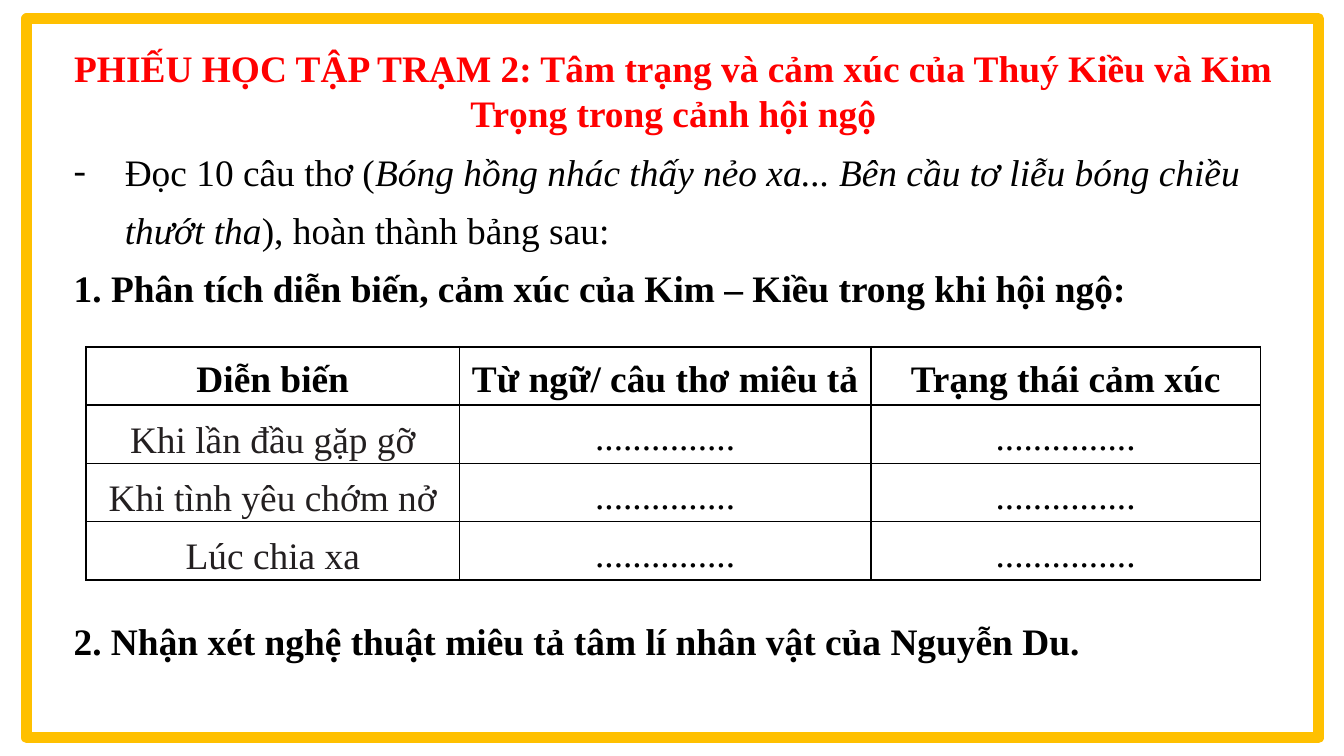
from lxml.etree import SubElement
from pptx import Presentation
from pptx.dml.color import RGBColor
from pptx.enum.shapes import MSO_SHAPE
from pptx.enum.text import MSO_ANCHOR, MSO_AUTO_SIZE, PP_ALIGN
from pptx.oxml.ns import qn
from pptx.util import Inches, Pt

WHITE = RGBColor(0xFF, 0xFF, 0xFF)
GOLD = RGBColor(0xFF, 0xC0, 0x00)
RED = RGBColor(0xFF, 0x00, 0x00)
BLACK = RGBColor(0x00, 0x00, 0x00)
DARK = RGBColor(0x23, 0x1F, 0x20)


def style(para, color=BLACK, bold=False, space=1.3):
    para.line_spacing = space
    for run in para.runs:
        run.font.name = "Times New Roman"
        run.font.size = Pt(20)
        run.font.bold = bold
        run.font.color.rgb = color


def add_box(left, top, width, height):
    box = slide.shapes.add_textbox(Inches(left), Inches(top), Inches(width), Inches(height))
    box.text_frame.word_wrap = True
    box.text_frame.auto_size = MSO_AUTO_SIZE.SHAPE_TO_FIT_TEXT
    return box.text_frame


# Widescreen slide, 16:9
prs = Presentation()
prs.slide_width = Inches(10)
prs.slide_height = Inches(10) * 9 // 16
slide = prs.slides.add_slide(prs.slide_layouts[6])

# Gold frame
frame = slide.shapes.add_shape(
    MSO_SHAPE.RECTANGLE, Inches(0.2), Inches(0.14), Inches(9.61), Inches(5.35))
frame.shadow.inherit = False
frame.fill.solid()
frame.fill.fore_color.rgb = WHITE
frame.line.color.rgb = GOLD
frame.line.width = Pt(6)

# Heading, reading task and first question
intro = add_box(0.45, 0.29, 9.12, 2.39)
head = intro.paragraphs[0]
head.text = "PHIẾU HỌC TẬP TRẠM 2: Tâm trạng và cảm xúc của Thuý Kiều và Kim Trọng trong cảnh hội ngộ"
head.alignment = PP_ALIGN.CENTER
style(head, RED, True, 1.0)

task = intro.add_paragraph()
for text in ("Đọc 10 câu thơ (",
             "Bóng hồng nhác thấy nẻo xa... Bên cầu tơ liễu bóng chiều thướt tha",
             "), hoàn thành bảng sau:"):
    task.add_run().text = text
style(task)
task.runs[1].font.italic = True
props = task._p.get_or_add_pPr()
props.set("marL", str(Inches(0.38)))
props.set("indent", str(-Inches(0.38)))
SubElement(props, qn("a:buFont"), typeface="Times New Roman")
SubElement(props, qn("a:buChar"), char="-")

first = intro.add_paragraph()
first.text = "1. Phân tích diễn biến, cảm xúc của Kim – Kiều trong khi hội ngộ:"
style(first, bold=True)

# Worksheet table
DOTS = "." * 15
rows = [("Diễn biến", "Từ ngữ/ câu thơ miêu tả", "Trạng thái cảm xúc")]
rows += [(stage, DOTS, DOTS) for stage in
         ("Khi lần đầu gặp gỡ", "Khi tình yêu chớm nở", "Lúc chia xa")]
table = slide.shapes.add_table(
    4, 3, Inches(0.64), Inches(2.58), Inches(8.74), Inches(1.56)).table
table.first_row = table.horz_banding = False
for col, width in zip(table.columns, (2.78, 3.06, 2.9)):
    col.width = Inches(width)

for r, row in enumerate(rows):
    for c, text in enumerate(row):
        cell = table.cell(r, c)
        stage = r > 0 and c == 0
        cell.margin_left = cell.margin_right = Inches(0.07)
        cell.margin_top = cell.margin_bottom = 0
        para = cell.text_frame.paragraphs[0]
        para.text = text
        para.alignment = PP_ALIGN.CENTER
        style(para, DARK if stage else BLACK, r == 0)
        if stage:
            cell.vertical_anchor = MSO_ANCHOR.MIDDLE
        else:
            para.space_after = Pt(10)
        # Borders come before the fill in the cell properties
        props = cell._tc.get_or_add_tcPr()
        for side in ("lnL", "lnR", "lnT", "lnB"):
            line = SubElement(props, qn("a:" + side), w=str(Pt(1)))
            fill = SubElement(line, qn("a:solidFill"))
            SubElement(fill, qn("a:srgbClr"), val=str(BLACK))
        cell.fill.background()

# Second question
last = add_box(0.45, 4.45, 9.14, 0.49).paragraphs[0]
last.text = "2. Nhận xét nghệ thuật miêu tả tâm lí nhân vật của Nguyễn Du."
last.space_after = Pt(10)
style(last, bold=True)

prs.save("out.pptx")
